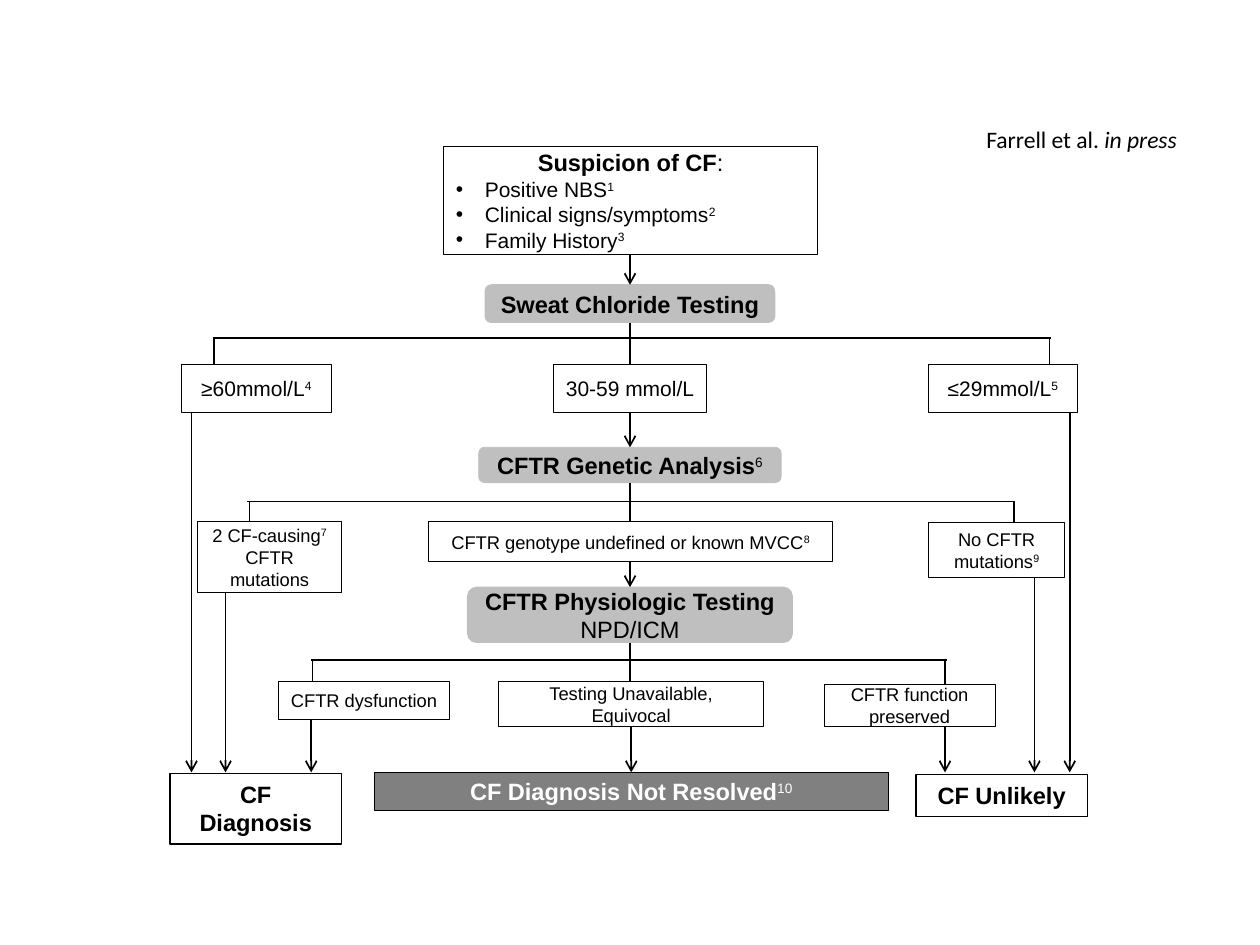
from dataclasses import dataclass

import pptx
import pptx.dml.color
import pptx.enum.shapes
import pptx.enum.text
import pptx.util
from lxml import etree
from pptx.oxml.ns import qn
from pptx.util import Inches

SHAPE = pptx.enum.shapes.MSO_SHAPE
ALIGN = pptx.enum.text.PP_ALIGN
ANCHOR = pptx.enum.text.MSO_ANCHOR
AUTO_SIZE = pptx.enum.text.MSO_AUTO_SIZE
BLACK, WHITE, STEP_GRAY, UNRESOLVED_GRAY = "000000", "FFFFFF", "BFBFBF", "808080"
HEADING, RESULT, DETAIL = 13.5, 12, 10.5


@dataclass
class Run:
    text: str
    size: float = HEADING
    bold: bool = False
    italic: bool = False
    raised: bool = False


@dataclass
class Line:
    runs: list[Run]
    bullet: bool = False


@dataclass
class Box:
    left: float
    top: float
    width: float
    height: float
    lines: list[Line]
    fill: str | None = None
    outline: str = BLACK
    weight: float = 0.5
    ink: str = BLACK
    rounded: bool = False
    grows: bool = False


@dataclass
class Branch:
    """A bar at height y whose drops end at (x, bottom)."""
    y: float
    left: float
    right: float
    drops: list[tuple[float, float]]


def rgb(hex_color: str) -> pptx.dml.color.RGBColor:
    return pptx.dml.color.RGBColor.from_string(hex_color)


def label(text: str, size: float, note: str = "", bold: bool = False,
          rest: str = "") -> Line:
    """One line of text with an optional raised note number."""
    runs = [Run(text, size, bold)]
    if note:
        runs.append(Run(note, size, raised=True))
    if rest:
        runs.append(Run(rest, size, bold))
    return Line(runs)


def write_runs(paragraph, runs: list[Run], face: str, ink: str) -> None:
    for part in runs:
        run = paragraph.add_run()
        run.text = part.text
        formats = {"name": face, "size": pptx.util.Pt(part.size),
                   "bold": part.bold, "italic": part.italic}
        for attribute, value in formats.items():
            setattr(run.font, attribute, value)
        run.font.color.rgb = rgb(ink)
        if part.raised:
            run.font._element.set("baseline", "30000")


def add_bullet(paragraph) -> None:
    properties = paragraph._p.get_or_add_pPr()
    properties.set("marL", str(Inches(0.23)))
    properties.set("indent", str(Inches(-0.23)))
    etree.SubElement(properties, qn("a:buFont")).set("typeface", "Arial")
    etree.SubElement(properties, qn("a:buChar")).set("char", "•")


def draw_box(slide, box: Box) -> None:
    kind = SHAPE.ROUNDED_RECTANGLE if box.rounded else SHAPE.RECTANGLE
    shape = slide.shapes.add_shape(
        kind, Inches(box.left), Inches(box.top), Inches(box.width), Inches(box.height))
    shape.shadow.inherit = False
    if box.fill:
        shape.fill.solid()
        shape.fill.fore_color.rgb = rgb(box.fill)
    else:
        shape.fill.background()
    shape.line.color.rgb = rgb(box.outline)
    shape.line.width = pptx.util.Pt(box.weight)
    frame = shape.text_frame
    formats = {
        "word_wrap": True,
        "vertical_anchor": ANCHOR.TOP if box.grows else ANCHOR.MIDDLE,
        "auto_size": AUTO_SIZE.SHAPE_TO_FIT_TEXT if box.grows else AUTO_SIZE.NONE,
    }
    for attribute, value in formats.items():
        setattr(frame, attribute, value)
    for index, line in enumerate(box.lines):
        paragraph = frame.add_paragraph() if index else frame.paragraphs[0]
        paragraph.alignment = ALIGN.LEFT if line.bullet else ALIGN.CENTER
        if line.bullet:
            add_bullet(paragraph)
        write_runs(paragraph, line.runs, "Arial", box.ink)


def draw_line(slide, x1: float, y1: float, x2: float, y2: float,
              arrow: bool = False) -> None:
    connector = slide.shapes.add_connector(
        pptx.enum.shapes.MSO_CONNECTOR.STRAIGHT,
        Inches(x1), Inches(y1), Inches(x2), Inches(y2))
    connector.line.color.rgb = rgb(BLACK)
    connector.line.width = pptx.util.Pt(1)
    properties = connector._element.spPr
    if arrow:
        etree.SubElement(properties.find(qn("a:ln")), qn("a:tailEnd")).set("type", "arrow")
    etree.SubElement(properties, qn("a:effectLst"))


def draw_branch(slide, branch: Branch) -> None:
    draw_line(slide, branch.left, branch.y, branch.right, branch.y)
    for x, bottom in branch.drops:
        draw_line(slide, x, branch.y, x, bottom)


def draw_citation(slide) -> None:
    citation = slide.shapes.add_textbox(
        Inches(7.73), Inches(0.94), Inches(2.27), Inches(0.33))
    citation.text_frame.word_wrap = True
    citation.text_frame.auto_size = AUTO_SIZE.SHAPE_TO_FIT_TEXT
    runs = [Run("Farrell et al. "), Run("in press", italic=True)]
    write_runs(citation.text_frame.paragraphs[0], runs, "Calibri", BLACK)


SUSPICION = [Line([Run("Suspicion of CF", bold=True), Run(":")])] + [
    Line(label(reason, RESULT, note).runs, bullet=True)
    for reason, note in [("Positive NBS", "1"), ("Clinical signs/symptoms", "2"),
                         ("Family History", "3")]]

OUTCOMES = [
    Box(1.35, 6.14, 1.36, 0.56, [label("CF Diagnosis", HEADING, bold=True)],
        weight=0.75, grows=True),
    Box(7.27, 6.15, 1.36, 0.33, [label("CF Unlikely", HEADING, bold=True)],
        weight=0.75, grows=True),
    Box(2.97, 6.13, 4.08, 0.3, [label("CF Diagnosis Not Resolved", HEADING, "10", True)],
        fill=UNRESOLVED_GRAY, ink=WHITE),
]

STEPS = [
    Box(left, top, width, height, lines, fill=STEP_GRAY, outline=STEP_GRAY, rounded=True)
    for left, top, width, height, lines in [
        (3.85, 2.26, 2.3, 0.3, [label("Sweat Chloride Testing", HEADING, bold=True)]),
        (3.8, 3.55, 2.4, 0.28, [label("CFTR Genetic Analysis", HEADING, "6", True)]),
        (3.71, 4.66, 2.58, 0.44, [label("CFTR Physiologic Testing", HEADING, bold=True),
                                  label("NPD/ICM", HEADING)]),
    ]]

FINDINGS = [
    Box(left, top, width, height, [line])
    for left, top, width, height, line in [
        (1.44, 2.89, 1.19, 0.38, label("≥60mmol/L", RESULT, "4")),
        (7.37, 2.89, 1.18, 0.38, label("≤29mmol/L", RESULT, "5")),
        (4.39, 2.89, 1.22, 0.38, label("30-59 mmol/L", RESULT)),
        (1.57, 4.14, 1.14, 0.56, label("2 CF-causing", DETAIL, "7", rest=" CFTR mutations")),
        (7.37, 4.15, 1.08, 0.43, label("No CFTR mutations", DETAIL, "9")),
        (3.4, 4.14, 3.21, 0.32, label("CFTR genotype undefined or known MVCC", DETAIL, "8")),
        (2.21, 5.41, 1.36, 0.3, label("CFTR dysfunction", DETAIL)),
        (6.54, 5.43, 1.36, 0.34, label("CFTR function preserved", DETAIL)),
        (3.96, 5.41, 2.1, 0.36, label("Testing Unavailable, Equivocal", DETAIL)),
    ]]

BRANCHES = [
    Branch(2.68, 1.69, 8.34, [(1.7, 2.89), (8.33, 2.89)]),
    Branch(3.98, 1.96, 8.05, [(1.98, 4.14), (8.05, 4.14)]),
    Branch(5.24, 2.47, 7.52, [(2.48, 5.41), (7.5, 5.43)]),
]
STEMS = [(5, 2.56, 2.89), (5, 3.83, 4.14), (5, 5.1, 5.41)]
ARROWS = [(5, 2.02, 2.26), (5, 3.27, 3.55), (5, 4.46, 4.66)] + [
    (x, top, 6.13) for x, top in [(1.52, 3.27), (1.79, 4.71), (2.47, 5.71), (5.01, 5.77),
                                  (7.5, 5.77), (8.21, 4.58), (8.49, 3.27)]]


def main() -> None:
    deck = pptx.Presentation()
    deck.slide_width, deck.slide_height = Inches(10), Inches(7.5)
    slide = deck.slides.add_slide(deck.slide_layouts[6])
    for box in OUTCOMES + [Box(3.52, 1.16, 2.97, 0.86, SUSPICION)] + STEPS + FINDINGS:
        draw_box(slide, box)
    for branch in BRANCHES:
        draw_branch(slide, branch)
    for x, top, bottom in STEMS:
        draw_line(slide, x, top, x, bottom)
    for x, top, bottom in ARROWS:
        draw_line(slide, x, top, x, bottom, arrow=True)
    draw_citation(slide)
    deck.save("out.pptx")


if __name__ == "__main__":
    main()
